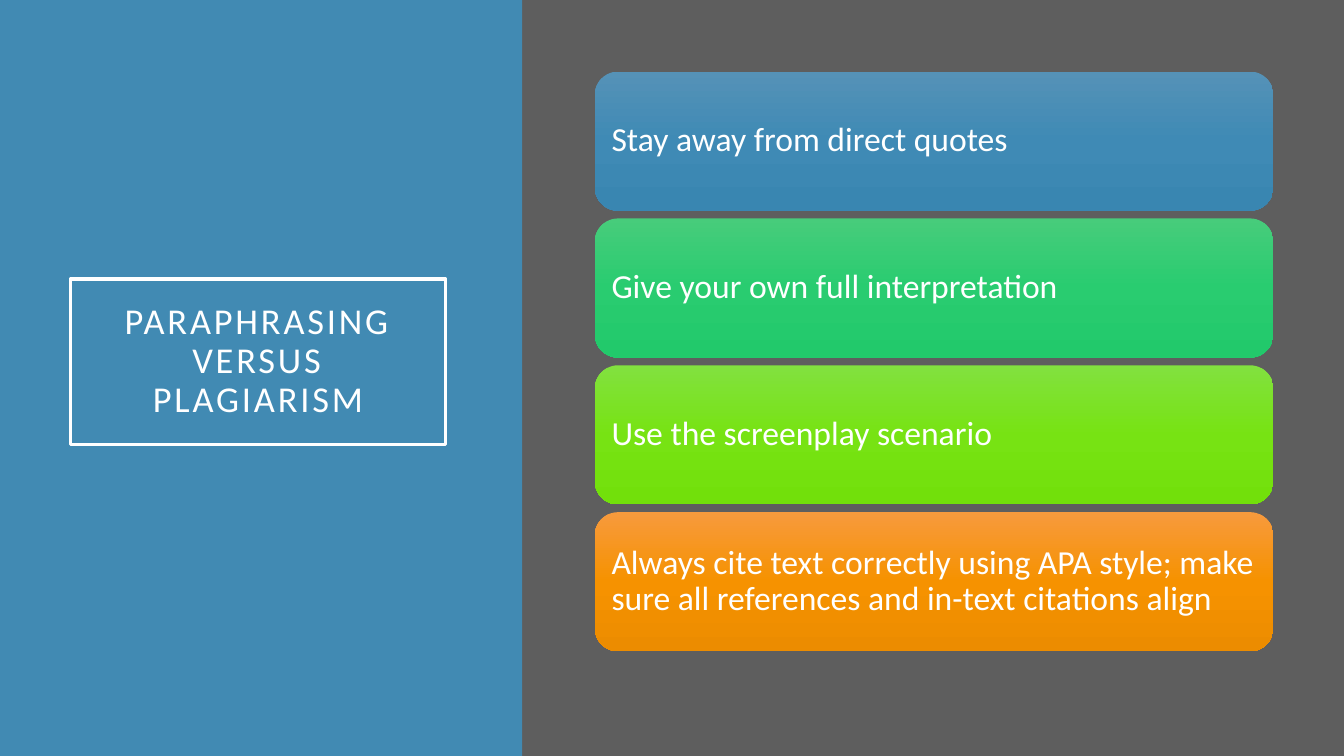
from copy import deepcopy
from dataclasses import dataclass

from pptx import Presentation
from pptx.dml.color import RGBColor
from pptx.enum.shapes import MSO_SHAPE
from pptx.enum.text import MSO_ANCHOR, MSO_AUTO_SIZE, PP_ALIGN
from pptx.oxml.ns import qn
from pptx.util import Inches, Pt


@dataclass(frozen=True)
class Theme:
    """Colours and type sizes of the slide."""
    font: str = "Calibri"
    text: str = "FFFFFF"
    backdrop: str = "5E5E5E"
    accent: str = "418AB3"
    title_size: int = 26
    tip_size: int = 24


THEME = Theme()
TIPS = [
    ("Stay away from direct quotes", ("5592B7", "3F8AB5", "3986B1")),
    ("Give your own full interpretation", ("47CC7B", "29CC70", "22C96B")),
    ("Use the screenplay scenario", ("82E13F", "77E313", "72E00B")),
    ("Always cite text correctly using APA style; make sure all references "
     "and in-text citations align", ("F79A3D", "F69200", "EC8C00")),
]


def rgb(code):
    """Turn a hex code into a colour."""
    return RGBColor.from_string(code)


def write(shape, text, *, size, inset, align=PP_ALIGN.LEFT, tracking=0):
    """Put one formatted paragraph, vertically centred, into a shape."""
    frame = shape.text_frame
    frame.word_wrap = True
    frame.auto_size = MSO_AUTO_SIZE.NONE
    frame.vertical_anchor = MSO_ANCHOR.MIDDLE
    frame.margin_left = frame.margin_right = Inches(inset)
    frame.margin_top = frame.margin_bottom = Inches(inset)
    paragraph = frame.paragraphs[0]
    paragraph.alignment = align
    paragraph.line_spacing = 0.9
    run = paragraph.add_run()
    run.text = text
    run.font.name = THEME.font
    run.font.size = Pt(size)
    run.font.color.rgb = rgb(THEME.text)
    if tracking:
        run.font._element.set("spc", str(tracking * 100))


def add_block(slide, kind, left, top, width, height):
    """Add a preset shape without line or shadow."""
    block = slide.shapes.add_shape(
        kind, Inches(left), Inches(top), Inches(width), Inches(height))
    block.shadow.inherit = False
    block.line.fill.background()
    return block


def add_panel(slide, color, left, top, width, height):
    """Add a plain rectangle of one colour."""
    panel = add_block(slide, MSO_SHAPE.RECTANGLE, left, top, width, height)
    panel.fill.solid()
    panel.fill.fore_color.rgb = rgb(color)


def shade(shape, colors):
    """Fill a shape with evenly spaced colours from top to bottom."""
    shape.fill.gradient()
    shape.fill.gradient_angle = 270
    stop_list = shape._element.spPr.find(qn("a:gradFill")).find(qn("a:gsLst"))
    while len(stop_list) < len(colors):
        stop_list.append(deepcopy(stop_list[-1]))
    for index, (stop, color) in enumerate(zip(shape.fill.gradient_stops, colors)):
        stop.color.rgb = rgb(color)
        stop.position = index / (len(colors) - 1)


def title_region(slide, left, top, width, height):
    """Draw the accent panel with the framed title on it."""
    add_panel(slide, THEME.accent, left, top, width, height)
    title = slide.shapes.title
    slide.shapes._spTree.append(title._element)
    title.left, title.top = Inches(left + 0.7), Inches(top + 2.77)
    title.width, title.height = Inches(3.72), Inches(1.64)
    title.line.color.rgb = rgb(THEME.text)
    title.line.width = Pt(2.5)
    write(title, "PARAPHRASING VERSUS PLAGIARISM", size=THEME.title_size,
          inset=0.2, align=PP_ALIGN.CENTER, tracking=2)


def tips_region(slide, left, top, width, height):
    """Draw the backdrop panel with the stack of tips."""
    add_panel(slide, THEME.backdrop, left, top, width, height)
    card_height, pitch = 1.38, 1.457
    for row, (tip, colors) in enumerate(TIPS):
        card = add_block(slide, MSO_SHAPE.ROUNDED_RECTANGLE, left + 0.7,
                         top + 0.71 + row * pitch, 6.73, card_height)
        shade(card, colors)
        write(card, tip, size=THEME.tip_size, inset=0.1)


def main():
    """Build the slide and save it."""
    deck = Presentation()
    deck.slide_width, deck.slide_height = Inches(13.33), Inches(7.5)
    slide = deck.slides.add_slide(deck.slide_layouts[5])
    slide.background.fill.solid()
    slide.background.fill.fore_color.rgb = rgb(THEME.backdrop)
    title_region(slide, 0, 0, 5.18, 7.5)
    tips_region(slide, 5.2, 0, 8.13, 7.5)
    deck.save("out.pptx")


if __name__ == "__main__":
    main()
